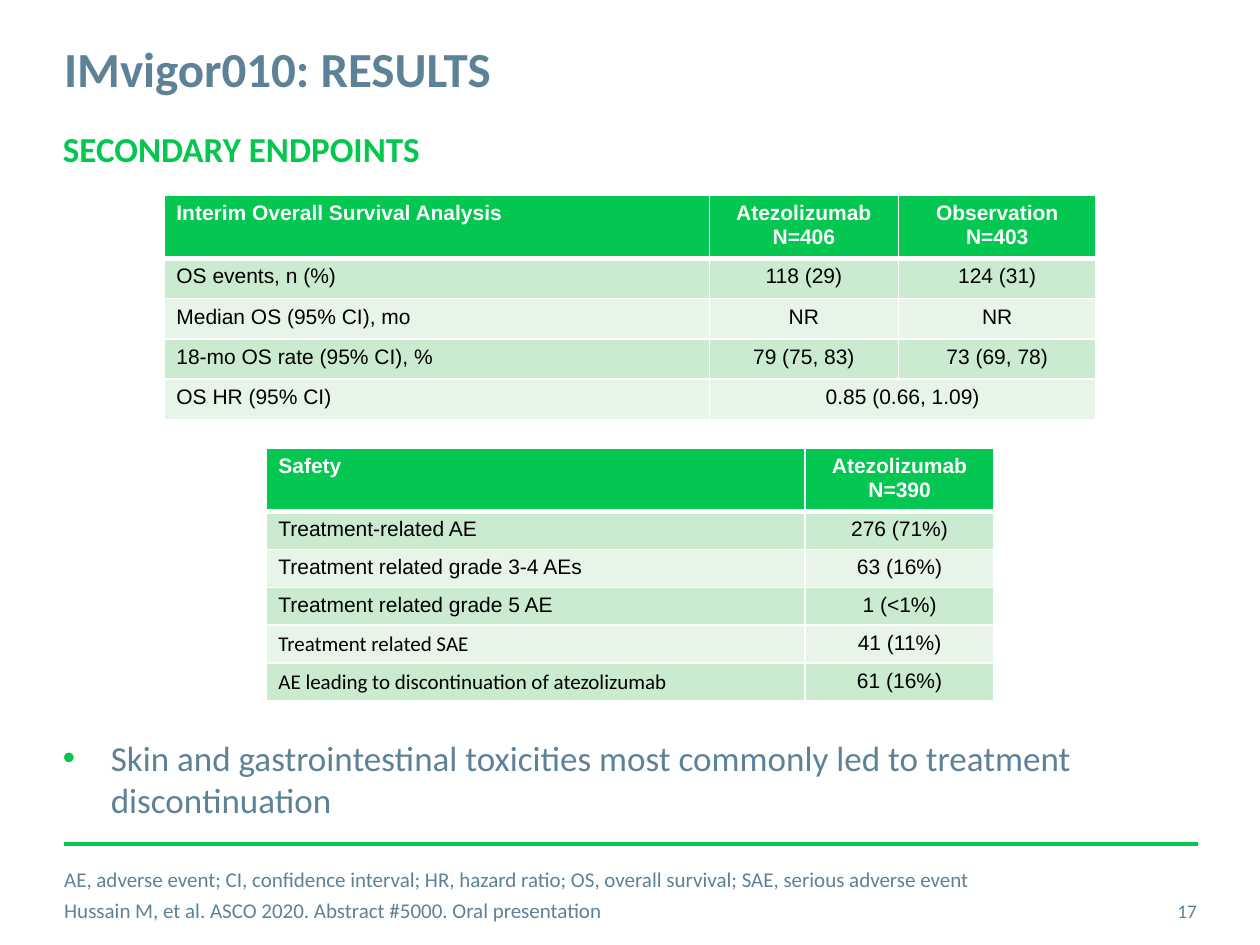
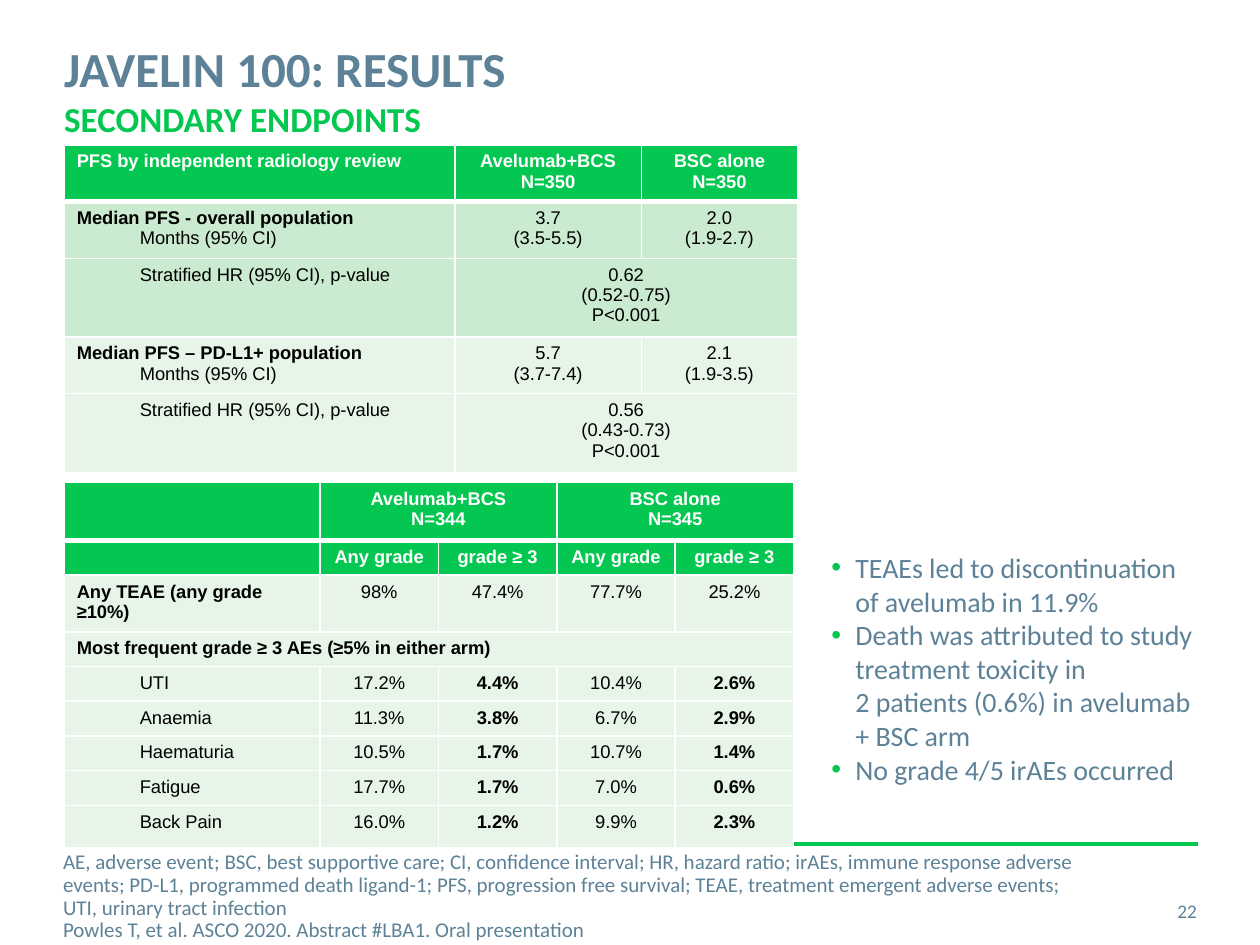
from dataclasses import dataclass

from lxml.etree import SubElement
from pptx import Presentation
from pptx.dml.color import RGBColor
from pptx.enum.shapes import MSO_CONNECTOR
from pptx.enum.text import MSO_ANCHOR, PP_ALIGN
from pptx.oxml import parse_xml
from pptx.oxml.ns import nsdecls, qn
from pptx.util import Inches, Pt


@dataclass(frozen=True)
class Theme:
    heading_font: str = "Calibri"
    table_font: str = "Arial"
    slate: str = "5D8298"
    green: str = "03C74F"
    header: str = "03C750"
    band: str = "CAEBCF"
    pale: str = "E6F5E8"
    white: str = "FFFFFF"
    black: str = "000000"
    title: float = 28
    subtitle: float = 20
    note: float = 12
    page: float = 11
    indent: float = 0.5


class Bold(str):
    pass


class Sub(str):
    pass


class Plain(str):
    pass


T = Theme()
BAND, PALE = T.band, T.pale
GRADES = ["Any grade", "grade ≥ 3"]
ADVERSE_EVENTS = [
    ("UTI", "17.2%", "4.4%", "10.4%", "2.6%"),
    ("Anaemia", "11.3%", "3.8%", "6.7%", "2.9%"),
    ("Haematuria", "10.5%", "1.7%", "10.7%", "1.4%"),
    ("Fatigue", "17.7%", "1.7%", "7.0%", "0.6%"),
    ("Back Pain", "16.0%", "1.2%", "9.9%", "2.3%"),
]

SLIDES = [
    {
        "title": "IMvigor010: RESULTS",
        "subtitle_at": (0.5, 1.01, 9, 0.77),
        "page": "17",
        "note_at": (0.51, 6.9, 8.67, 0.4),
        "note_spacing": {"before": 3},
        "notes": [
            "AE, adverse event; CI, confidence interval; HR, hazard ratio; OS, overall survival; "
            "SAE, serious adverse event",
            "Hussain M, et al. ASCO 2020. Abstract #5000. Oral presentation",
        ],
        "bullets_at": (0.5, 5.8, 8.24, 0.77),
        "bullets_style": {"size": 20, "bullet": 0.38, "insets": (0, 0.05, 0.1, 0.05)},
        "bullets": [
            "Skin and gastrointestinal toxicities most commonly led to treatment \ndiscontinuation",
        ],
        "tables": [
            {
                "at": (1.3, 1.55), "size": 12, "headers": 1,
                "cols": [4.33, 1.5, 1.57],
                "heights": [0.49] + [0.32] * 4,
                "fills": [BAND, PALE, BAND, PALE],
                "rows": [
                    ("Interim Overall Survival Analysis", "Atezolizumab\nN=406", "Observation\nN=403"),
                    ("OS events, n (%)", "118 (29)", "124 (31)"),
                    ("Median OS (95% CI), mo", "NR", "NR"),
                    ("18-mo OS rate (95% CI), %", "79 (75, 83)", "73 (69, 78)"),
                    ("OS HR (95% CI)", "0.85 (0.66, 1.09)", None),
                ],
            },
            {
                "at": (2.11, 3.56), "size": 12, "headers": 1,
                "cols": [4.28, 1.5],
                "heights": [0.48] + [0.29] * 3 + [0.3] * 2,
                "fills": [BAND, PALE, BAND, PALE, BAND],
                "rows": [
                    ("Safety", "Atezolizumab\nN=390"),
                    ("Treatment-related AE", "276 (71%)"),
                    ("Treatment related grade 3-4 AEs", "63 (16%)"),
                    ("Treatment related grade 5 AE", "1 (<1%)"),
                    (Plain("Treatment related SAE"), "41 (11%)"),
                    (Plain("AE leading to discontinuation of atezolizumab"), "61 (16%)"),
                ],
            },
        ],
    },
    {
        "title": "JAVELIN 100: RESULTS",
        "subtitle_at": (0.51, 0.77, 9, 0.54),
        "page": "22",
        "note_at": (0.5, 6.92, 8.41, 0.4),
        "note_spacing": {"line": 0.9},
        "notes": [
            "AE, adverse event; BSC, best supportive care; CI, confidence interval; HR, hazard ratio; "
            "irAEs, immune response adverse events; PD-L1, programmed death ligand-1; "
            "PFS, progression free survival; TEAE, treatment emergent adverse events; \n"
            "UTI, urinary tract infection",
            "Powles T, et al. ASCO 2020. Abstract #LBA1. Oral presentation",
        ],
        "bullets_at": (6.5, 4.32, 3.15, 1.99),
        "bullets_style": {"size": 16, "bullet": 0.19, "insets": (0.1, 0.05, 0.1, 0.05)},
        "bullets": [
            "TEAEs led to discontinuation of avelumab in 11.9%",
            "Death was attributed to study treatment toxicity in \n2 patients (0.6%) in avelumab + BSC arm",
            "No grade 4/5 irAEs occurred",
        ],
        "tables": [
            {
                "at": (0.51, 1.15), "size": 10.5, "headers": 1,
                "cols": [3.1, 1.48, 1.24],
                "heights": [0.42, 0.42, 0.59, 0.42, 0.59],
                "fills": [BAND, BAND, PALE, PALE],
                "rows": [
                    ("PFS by independent radiology review", "Avelumab+BCS\nN=350", "BSC alone\nN=350"),
                    ([Bold("Median PFS - overall population"), Sub("Months (95% CI)")],
                     "3.7\n(3.5-5.5)", "2.0\n(1.9-2.7)"),
                    (Sub("Stratified HR (95% CI), p-value"), "0.62\n(0.52-0.75)\nP<0.001", None),
                    ([Bold("Median PFS – PD-L1+ population"), Sub("Months (95% CI)")],
                     "5.7\n(3.7-7.4)", "2.1\n(1.9-3.5)"),
                    (Sub("Stratified HR (95% CI), p-value"), "0.56\n(0.43-0.73)\nP<0.001", None),
                ],
            },
            {
                "at": (0.51, 3.83), "size": 10.5, "headers": 2,
                "cols": [2.03] + [0.94] * 4,
                "heights": [0.46, 0.27, 0.43] + [0.26] * 5 + [0.34],
                "fills": [PALE] * 7,
                "rows": [
                    ("", "Avelumab+BCS\nN=344", None, "BSC alone\nN=345", None),
                    ("", *GRADES, *GRADES),
                    (Bold("Any TEAE (any grade ≥10%)"), "98%", "47.4%", "77.7%", "25.2%"),
                    (Bold("Most frequent grade ≥ 3 AEs (≥5% in either arm)"), None, None, None, None),
                    *[(Sub(name), any_a, Bold(high_a), any_b, Bold(high_b))
                      for name, any_a, high_a, any_b, high_b in ADVERSE_EVENTS],
                ],
            },
        ],
    },
]


def add_text(p, text, size, color, font=T.heading_font, bold=False):
    for i, part in enumerate(text.split("\n")):
        if i:
            p.add_line_break()
        r = p.add_run()
        r.text = part
        r.font.name, r.font.size, r.font.bold = font, Pt(size), bold
        r.font.color.rgb = RGBColor.from_string(color)


def set_indent(p, left, hanging=0.0):
    pPr = p._p.get_or_add_pPr()
    pPr.set("marL", str(Inches(left)))
    pPr.set("indent", str(-Inches(hanging)))
    return pPr


def add_bullet(p, hanging):
    pPr = set_indent(p, hanging, hanging)
    SubElement(SubElement(pPr, qn("a:buClr")), qn("a:srgbClr")).set("val", T.green)
    SubElement(pPr, qn("a:buFont")).set("typeface", "Arial")
    SubElement(pPr, qn("a:buChar")).set("char", "•")


def add_box(s, at, lines, size, color, bold=False, align=None, anchor=MSO_ANCHOR.TOP,
            insets=(0, 0, 0, 0), line=None, before=None, bullet=None):
    tf = s.shapes.add_textbox(*map(Inches, at)).text_frame
    tf.word_wrap, tf.vertical_anchor = True, anchor
    tf.margin_left, tf.margin_top, tf.margin_right, tf.margin_bottom = map(Inches, insets)
    for i, text in enumerate(lines):
        p = tf.add_paragraph() if i else tf.paragraphs[0]
        if line:
            p.line_spacing = line
        if before and i:
            p.space_before = Pt(before)
        if bullet:
            add_bullet(p, bullet)
        if align:
            p.alignment = align
        add_text(p, text, size, color, bold=bold)


def add_border(cell, top, bottom):
    tcPr = cell._tc.get_or_add_tcPr()
    for i, (side, width) in enumerate([("L", 1), ("R", 1), ("T", top), ("B", bottom)]):
        tcPr.insert(i, parse_xml(
            f'<a:ln{side} {nsdecls("a")} w="{Pt(width)}"><a:solidFill>'
            f'<a:srgbClr val="{T.white}"/></a:solidFill></a:ln{side}>'))


def fill_cell(cell, content, size, is_header, align):
    if not content:
        end = SubElement(cell.text_frame.paragraphs[0]._p, qn("a:endParaRPr"))
        end.set("sz", str(int(size * 100)))
        return
    tf = cell.text_frame
    lines = content if isinstance(content, list) else [type(content)(t) for t in content.split("\n")]
    for i, text in enumerate(lines):
        p = tf.add_paragraph() if i else tf.paragraphs[0]
        p.alignment = align
        if isinstance(text, Sub):
            set_indent(p, T.indent)
        font = T.heading_font if isinstance(text, Plain) else T.table_font
        add_text(p, text, size, T.white if is_header else T.black, font,
                 is_header or isinstance(text, Bold))


def add_grid(s, spec):
    rows, cols, heights = spec["rows"], spec["cols"], spec["heights"]
    x, y = spec["at"]
    tbl = s.shapes.add_table(len(rows), len(cols), Inches(x), Inches(y),
                             Inches(sum(cols)), Inches(sum(heights))).table
    tbl.first_row = tbl.horz_banding = False
    for col, width in zip(tbl.columns, cols):
        col.width = Inches(width)
    fills = [T.header] * spec["headers"] + spec["fills"]
    for i, row in enumerate(rows):
        tbl.rows[i].height = Inches(heights[i])
        for j, content in enumerate(row):
            cell = tbl.cell(i, j)
            cell.margin_left = cell.margin_right = Inches(0.1)
            cell.margin_top = cell.margin_bottom = Inches(0.05)
            cell.fill.solid()
            cell.fill.fore_color.rgb = RGBColor.from_string(fills[i])
            add_border(cell, top=3 if i == 1 else 1, bottom=3 if i == 0 else 1)
            fill_cell(cell, content, spec["size"], i < spec["headers"],
                      PP_ALIGN.CENTER if j else PP_ALIGN.LEFT)
        for j, content in enumerate(row):
            if content is not None:
                end = j
                while end + 1 < len(row) and row[end + 1] is None:
                    end += 1
                if end > j:
                    tbl.cell(i, j).merge(tbl.cell(i, end))


def add_rule(s):
    ln = s.shapes.add_connector(MSO_CONNECTOR.STRAIGHT, Inches(0.51), Inches(6.7),
                                Inches(9.51), Inches(6.7))
    ln.line.color.rgb = RGBColor.from_string(T.green)
    ln.line.width = Pt(2)
    SubElement(ln._element.spPr, qn("a:effectLst"))


def build_slide(prs, data):
    s = prs.slides.add_slide(prs.slide_layouts[6])
    add_rule(s)
    add_box(s, (0.51, 0.27, 7.17, 0.42), [data["title"]], T.title, T.slate, bold=True, line=1.07)
    add_box(s, data["subtitle_at"], ["SECONDARY ENDPOINTS"], T.subtitle, T.green, bold=True)
    for spec in data["tables"]:
        add_grid(s, spec)
    add_box(s, data["bullets_at"], data["bullets"], color=T.slate, **data["bullets_style"])
    add_box(s, data["note_at"], data["notes"], T.note, T.slate,
            anchor=MSO_ANCHOR.MIDDLE, **data["note_spacing"])
    add_box(s, (8.86, 7.03, 0.64, 0.4), [data["page"]], T.page, T.slate,
            align=PP_ALIGN.RIGHT, anchor=MSO_ANCHOR.MIDDLE)


def main():
    prs = Presentation()
    prs.slide_width, prs.slide_height = Inches(10), Inches(7.5)
    for data in SLIDES:
        build_slide(prs, data)
    prs.save("out.pptx")


if __name__ == "__main__":
    main()
